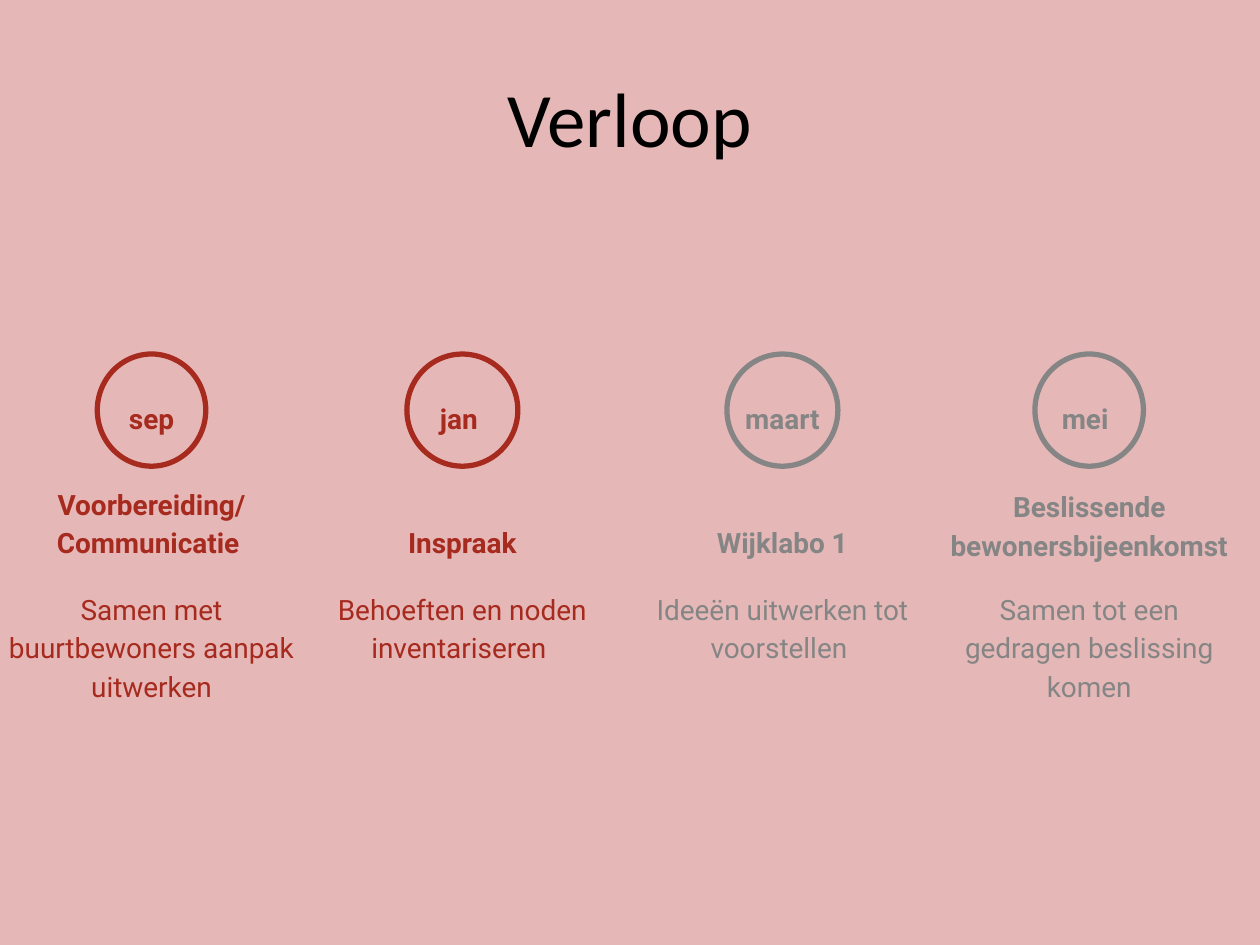
"""Build the "Verloop" slide: a four-step timeline with months, headings and descriptions."""
from pptx import Presentation
from pptx.dml.color import RGBColor
from pptx.enum.shapes import MSO_SHAPE
from pptx.enum.text import MSO_ANCHOR, PP_ALIGN
from pptx.util import Pt

PINK = RGBColor(0xE5, 0xB8, 0xB7)
RED = RGBColor(0xA7, 0x2A, 0x1E)
GRAY = RGBColor(0x85, 0x85, 0x85)
BLACK = RGBColor(0, 0, 0)


def add_label(shapes, text, center, top, width, height, color, bold=True,
              anchor=MSO_ANCHOR.TOP, align=PP_ALIGN.CENTER, after=16):
    tb = shapes.add_textbox(Pt(center - width / 2), Pt(top), Pt(width), Pt(height))
    tf = tb.text_frame
    tf.word_wrap = True
    tf.vertical_anchor = anchor
    tf.margin_left = tf.margin_right = tf.margin_top = tf.margin_bottom = Pt(7.2)
    p = tf.paragraphs[0]
    p.text = text
    p.alignment = align
    p.line_spacing = 1.15
    p.space_after = Pt(after)
    p.font.name = "Roboto"
    p.font.size = Pt(16)
    p.font.bold = bold
    p.font.color.rgb = color


prs = Presentation()
prs.slide_width, prs.slide_height = Pt(720), Pt(540)
s = prs.slides.add_slide(prs.slide_layouts[5])
s.background.fill.solid()
s.background.fill.fore_color.rgb = PINK

title = s.shapes.title
title.left, title.top, title.width, title.height = Pt(36), Pt(21.6), Pt(648), Pt(90)
title.text_frame.vertical_anchor = MSO_ANCHOR.MIDDLE
p = title.text_frame.paragraphs[0]
p.text = "Verloop"
p.alignment = PP_ALIGN.CENTER
p.font.name = "Calibri"
p.font.size = Pt(44)
p.font.color.rgb = BLACK

steps = [
    (86.6, 62, 45.4, 178.6, 182.9, RED, PP_ALIGN.CENTER, "sep", "Voorbereiding/\vCommunicatie ",
     "Samen met buurtbewoners aanpak uitwerken"),
    (264.2, 63.4, 46.8, 182.9, 182.9, RED, PP_ALIGN.CENTER, "jan ", "Inspraak",
     "Behoeften en noden inventariseren "),
    (447.1, 63.4, 63.4, 182.9, 182.9, GRAY, PP_ALIGN.CENTER, "maart", "Wijklabo 1",
     "Ideeën uitwerken tot voorstellen "),
    (622.4, 62, 45.4, 178.6, 178.6, GRAY, PP_ALIGN.LEFT, "mei", "Beslissende bewonersbijeenkomst",
     "Samen tot een gedragen beslissing komen"),
]
for center, ring_w, month_w, head_w, body_w, color, align, month, heading, body in steps:
    shapes = s.shapes.add_group_shape().shapes
    ring = shapes.add_shape(MSO_SHAPE.OVAL, Pt(center - ring_w / 2), Pt(202.3), Pt(ring_w), Pt(64.1))
    ring.shadow.inherit = False
    ring.fill.background()
    ring.line.color.rgb = color
    ring.line.width = Pt(3)
    add_label(shapes, month, center, 219.6, month_w, 34.6, color, align=align)
    head_h = 49.7 if month == "mei" else 48.2
    add_label(shapes, heading, center, 278.6, head_w, head_h, color, anchor=MSO_ANCHOR.BOTTOM, after=0)
    add_label(shapes, body, center, 328.3, body_w, 79.9, color, bold=False)

prs.save("out.pptx")
